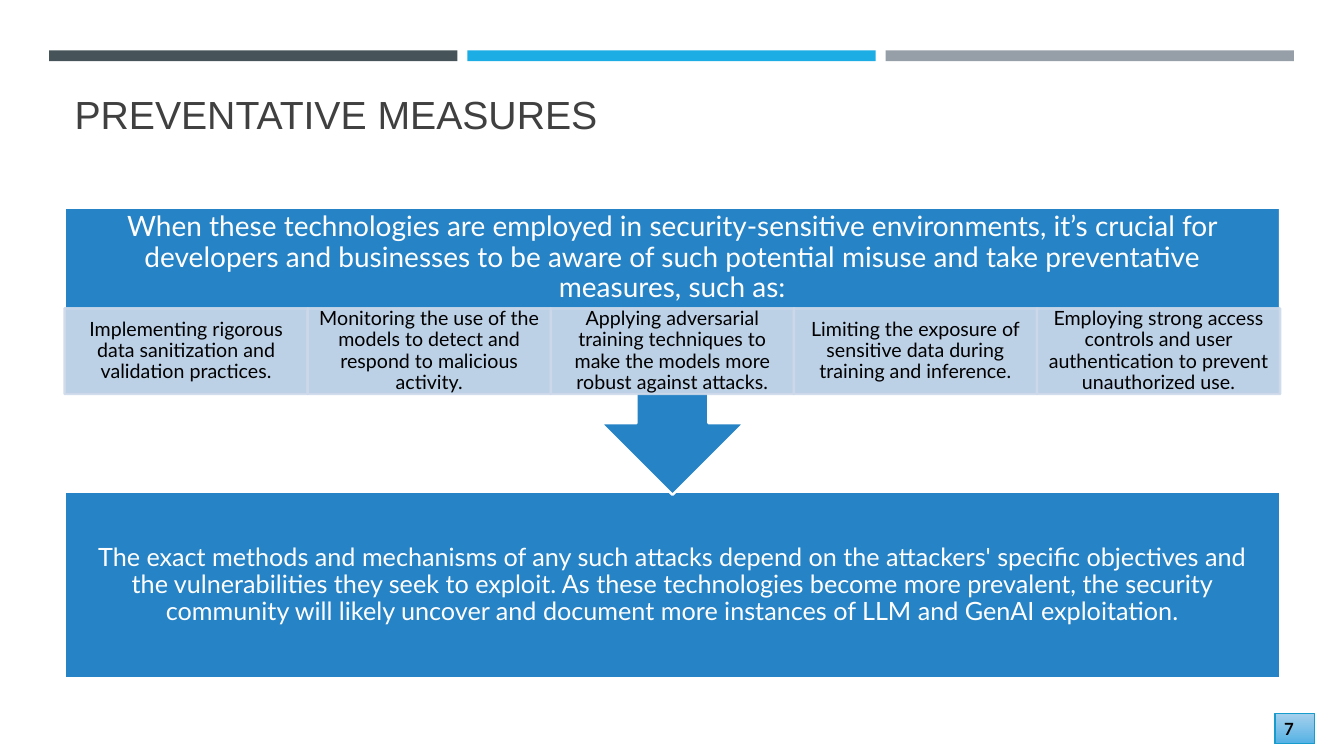
"""Build the slide on preventative measures."""
from lxml import etree
from pptx import Presentation
from pptx.dml.color import RGBColor
from pptx.enum import shapes, text
from pptx.oxml.ns import qn
from pptx.util import Cm, Pt

TITLE = "PREVENTATIVE MEASURES"
INTRO = ("When these technologies are employed in security-sensitive environments, "
         "it’s crucial for developers and businesses to be aware of such potential "
         "misuse and take preventative measures, such as:")
MEASURES = [
    "Implementing rigorous data sanitization and validation practices.",
    "Monitoring the use of the models to detect and respond to malicious activity.",
    "Applying adversarial training techniques to make the models more robust against attacks.",
    "Limiting the exposure of sensitive data during training and inference.",
    "Employing strong access controls and user authentication to prevent unauthorized use.",
]
OUTLOOK = ("The exact methods and mechanisms of any such attacks depend on the attackers' "
           "specific objectives and the vulnerabilities they seek to exploit. As these "
           "technologies become more prevalent, the security community will likely uncover "
           "and document more instances of LLM and GenAI exploitation.")
PAGE = "7"
COLORS = {"slate": "465359", "sky": "1CADE4", "gray": "969FA7", "blue": "2683C6",
          "pale": "CDD9EA", "white": "FFFFFF", "black": "000000", "title": "404040",
          "badge_top": "9CCCED", "badge_bottom": "52B1E5", "badge_line": "189CCE"}
LEFT, WIDTH = 1.63, 30.63
BAR_LEFT, BAR_WIDTH, BAR_STEP = 1.24, 10.29, 10.54
RECT = shapes.MSO_SHAPE.RECTANGLE
MIDDLE, BOTTOM = text.MSO_ANCHOR.MIDDLE, text.MSO_ANCHOR.BOTTOM


def rgb(name):
    return RGBColor.from_string(COLORS[name])


def add_block(slide, kind, box, fill, line=None, weight=1.75):
    sp = slide.shapes.add_shape(kind, *map(Cm, box))
    sp.shadow.inherit = False
    sp.fill.solid()
    sp.fill.fore_color.rgb = rgb(fill)
    if line:
        sp.line.color.rgb = rgb(line)
        sp.line.width = Pt(weight)
    else:
        sp.line.fill.background()
    return sp


def write(sp, words, size, color, font="Lato", align=text.PP_ALIGN.CENTER,
          anchor=MIDDLE, inset=(0.25, 0.13), spacing=0.9, bold=False):
    tf = sp.text_frame
    tf.word_wrap = True
    tf.vertical_anchor = anchor
    tf.margin_left = tf.margin_right = Cm(inset[0])
    tf.margin_top = tf.margin_bottom = Cm(inset[1])
    p = tf.paragraphs[0]
    p.alignment, p.line_spacing = align, spacing
    r = p.add_run()
    r.text = words
    r.font.name, r.font.size, r.font.bold = font, Pt(size), bold
    r.font.color.rgb = rgb(color)


def make_translucent(sp, count):
    for clr in list(sp.element.spPr.iter(qn("a:srgbClr")))[:count]:
        etree.SubElement(clr, qn("a:alpha")).set("val", "90000")


def main():
    prs = Presentation()
    prs.slide_width, prs.slide_height = Cm(33.87), Cm(19.05)
    s = prs.slides.add_slide(prs.slide_layouts[6])

    for i, color in enumerate(("slate", "sky", "gray")):
        add_block(s, RECT, (BAR_LEFT + i * BAR_STEP, 1.27, BAR_WIDTH, 0.27), color)

    badge = add_block(s, RECT, (32.13, 17.98, 1, 0.76), "sky", "badge_line", 1)
    badge.fill.gradient()
    badge.fill.gradient_angle = 270
    for stop, color in zip(badge.fill.gradient_stops, ("badge_top", "badge_bottom")):
        stop.color.rgb = rgb(color)
    make_translucent(badge, 1)
    write(badge, PAGE, 12, "black", align=text.PP_ALIGN.LEFT, anchor=BOTTOM,
          inset=(0.23, 0.13), spacing=1, bold=True)

    title = s.shapes.add_textbox(Cm(LEFT), Cm(0.3), Cm(WIDTH), Cm(3.3))
    write(title, TITLE, 28, "title", "Arial", text.PP_ALIGN.LEFT, BOTTOM, spacing=1)

    outlook = add_block(s, RECT, (LEFT, 12.4, WIDTH, 4.7), "blue", "white")
    write(outlook, OUTLOOK, 18, "white", inset=(0.36, 0.36))

    callout = add_block(s, shapes.MSO_SHAPE.UP_ARROW_CALLOUT,
                        (LEFT, 5.23, WIDTH, 7.24), "blue", "white")
    callout.rotation = 180
    intro = s.shapes.add_textbox(Cm(LEFT), Cm(5.23), Cm(WIDTH), Cm(2.54))
    write(intro, INTRO, 20, "white", inset=(0.4, 0.4))

    step = WIDTH / len(MEASURES)
    for i, measure in enumerate(MEASURES):
        cell = add_block(s, RECT, (LEFT + i * step, 7.77, step, 2.16), "pale", "pale")
        make_translucent(cell, 2)
        write(cell, measure, 14, "black", inset=(0.28, 0.05))

    prs.save("out.pptx")


if __name__ == "__main__":
    main()
